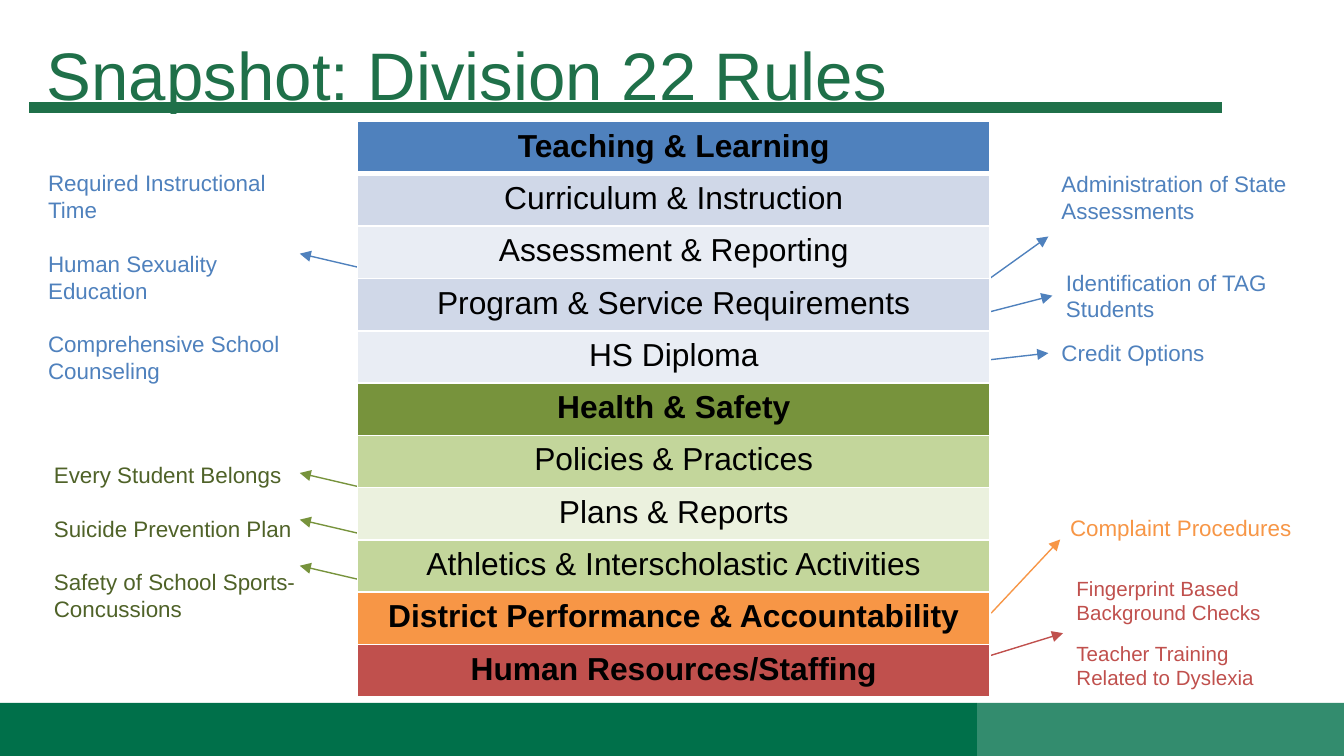
from dataclasses import dataclass

from lxml.etree import SubElement
from pptx import Presentation
from pptx.dml.color import RGBColor
from pptx.enum.shapes import MSO_CONNECTOR as Connector, MSO_SHAPE as Shape
from pptx.enum.text import PP_ALIGN as Align
from pptx.oxml.ns import qn
from pptx.util import Pt


@dataclass(frozen=True)
class Theme:
    font: str = "Arial"
    title_size: float = 36
    row_size: float = 17
    note_size: float = 12
    small_size: float = 11
    title: str = "1F7049"
    band: str = "00704A"
    black: str = "000000"
    white: str = "FFFFFF"
    blue: str = "4F81BD"
    blue_mid: str = "D0D8E8"
    blue_pale: str = "E9EDF4"
    green: str = "77933C"
    green_dark: str = "4F6228"
    green_mid: str = "C3D69B"
    green_pale: str = "EBF1DE"
    orange: str = "F79646"
    red: str = "C0504D"


THEME = Theme()
PAGE_WIDTH, PAGE_HEIGHT = 720, 405
TABLE_LEFT, TABLE_TOP, TABLE_WIDTH, ROW_HEIGHT = 191.5, 65.2, 339, 28.02
INSET = 7.2

# Row text, fill, and whether it is a section heading
ROWS = [
    ("Teaching & Learning", THEME.blue, True),
    ("Curriculum & Instruction", THEME.blue_mid, False),
    ("Assessment & Reporting", THEME.blue_pale, False),
    ("Program & Service Requirements", THEME.blue_mid, False),
    ("HS Diploma", THEME.blue_pale, False),
    ("Health & Safety", THEME.green, True),
    ("Policies & Practices", THEME.green_mid, False),
    ("Plans & Reports", THEME.green_pale, False),
    ("Athletics & Interscholastic Activities", THEME.green_mid, False),
    ("District Performance & Accountability", THEME.orange, True),
    ("Human Resources/Staffing", THEME.red, True),
]

# Left, top, width, height, colour, size, gap between paragraphs, paragraphs
NOTES = [
    (18.7, 83.5, 144, 131, THEME.blue, THEME.note_size, 14.4,
     ["Required Instructional Time", "Human Sexuality Education",
      "Comprehensive School Counseling"]),
    (561.6, 83.8, 144, 44, THEME.blue, THEME.note_size, 0,
     ["Administration of State Assessments"]),
    (564, 136.8, 144, 44, THEME.blue, THEME.note_size, 0,
     ["Identification of TAG Students"]),
    (561.6, 174.6, 133, 29, THEME.blue, THEME.note_size, 0, ["Credit Options"]),
    (21.8, 239.8, 144, 101.5, THEME.green_dark, THEME.note_size, 14.4,
     ["Every Student Belongs", "Suicide Prevention Plan",
      "Safety of School Sports- Concussions"]),
    (566.2, 268, 133, 29, THEME.orange, THEME.note_size, 0,
     ["Complaint Procedures"]),
    (569.6, 301.2, 125.3, 76, THEME.red, THEME.small_size, 8.4,
     ["Fingerprint Based Background Checks",
      "Teacher Training Related to Dyslexia"]),
]

# Left arrows share one slope: start height and colour
LEFT_ARROWS = [(143.1, THEME.blue), (260.6, THEME.green),
               (285.6, THEME.green), (310.3, THEME.green)]
# Right arrows: start, end, colour
RIGHT_ARROWS = [
    ((530.5, 149, 561.6, 126.7), THEME.blue),
    ((530.5, 167, 563.8, 158.4), THEME.blue),
    ((530.5, 192.7, 561.6, 189.2), THEME.blue),
    ((531, 328.5, 568, 289), THEME.orange),
    ((530.6, 351.2, 569.5, 339.2), THEME.red),
]


def style_font(font, size, color, bold=False):
    font.name = THEME.font
    font.size = Pt(size)
    font.bold = bold
    font.color.rgb = RGBColor.from_string(color)


def add_band(page, left, width, opacity=None):
    height = 28.4
    band = page.shapes.add_shape(Shape.RECTANGLE, Pt(left), Pt(PAGE_HEIGHT - height),
                                 Pt(width), Pt(height))
    band.shadow.inherit = False
    band.fill.solid()
    band.fill.fore_color.rgb = RGBColor.from_string(THEME.band)
    band.line.fill.background()
    if opacity:
        color = band.fill._xPr.find(qn("a:solidFill"))[0]
        SubElement(color, qn("a:alpha"), val=str(opacity * 1000))


def add_line(page, ends, color, width=0.75, arrow=True):
    line = page.shapes.add_connector(Connector.STRAIGHT, *map(Pt, ends))
    line.line.color.rgb = RGBColor.from_string(color)
    line.line.width = Pt(width)
    if arrow:
        SubElement(line.line._get_or_add_ln(), qn("a:tailEnd"), type="triangle")
    SubElement(line._element.spPr, qn("a:effectLst"))


def add_text(page, left, top, width, height, color, size, gap, lines,
             top_inset=INSET):
    box = page.shapes.add_textbox(Pt(left), Pt(top), Pt(width), Pt(height))
    frame = box.text_frame
    frame.word_wrap = True
    frame.margin_left = frame.margin_right = frame.margin_bottom = Pt(INSET)
    frame.margin_top = Pt(top_inset)
    frame.text = "\n".join(lines)
    for index, para in enumerate(frame.paragraphs):
        if index and gap:
            para.space_before = Pt(gap)
        for span in para.runs:
            style_font(span.font, size, color)


def set_borders(cell, widths):
    """Draw white borders; they come before the fill in the cell properties."""
    properties = cell._tc.get_or_add_tcPr()
    for index, (side, width) in enumerate(widths.items()):
        border = SubElement(properties, qn(f"a:ln{side}"), w=str(Pt(width)))
        fill = SubElement(border, qn("a:solidFill"))
        SubElement(fill, qn("a:srgbClr"), val=THEME.white)
        properties.insert(index, border)


def add_rules_table(page):
    table = page.shapes.add_table(len(ROWS), 1, Pt(TABLE_LEFT), Pt(TABLE_TOP),
                                  Pt(TABLE_WIDTH), Pt(ROW_HEIGHT * len(ROWS))).table
    table.horz_banding = False
    for index, (text, fill, heading) in enumerate(ROWS):
        table.rows[index].height = Pt(ROW_HEIGHT)
        cell = table.cell(index, 0)
        cell.text_frame.text = text
        para = cell.text_frame.paragraphs[0]
        para.alignment = Align.CENTER
        style_font(para.runs[0].font, THEME.row_size, THEME.black, heading)
        cell.fill.solid()
        cell.fill.fore_color.rgb = RGBColor.from_string(fill)
        set_borders(cell, {"L": 1, "R": 1, "T": 3 if index == 1 else 1,
                           "B": 3 if index == 0 else 1})


def main():
    deck = Presentation()
    deck.slide_width, deck.slide_height = Pt(PAGE_WIDTH), Pt(PAGE_HEIGHT)
    page = deck.slides.add_slide(deck.slide_layouts[6])

    # Footer bands and title
    split = 523.4
    add_band(page, 0, split)
    add_band(page, split, PAGE_WIDTH - split, opacity=80)
    add_line(page, (15.8, 57.8, 654.5, 57.8), THEME.title, width=6, arrow=False)
    add_text(page, 18, 14.4, 686, 47.5, THEME.title, THEME.title_size, 0,
             ["Snapshot: Division 22 Rules"], top_inset=3.4)

    # Side notes and their arrows
    for note in NOTES:
        add_text(page, *note)
    for start, color in LEFT_ARROWS:
        add_line(page, (TABLE_LEFT, start, 160.6, start - 7.2), color)
    for ends, color in RIGHT_ARROWS:
        add_line(page, ends, color)

    # Central list of rules
    add_rules_table(page)
    deck.save("out.pptx")


if __name__ == "__main__":
    main()
